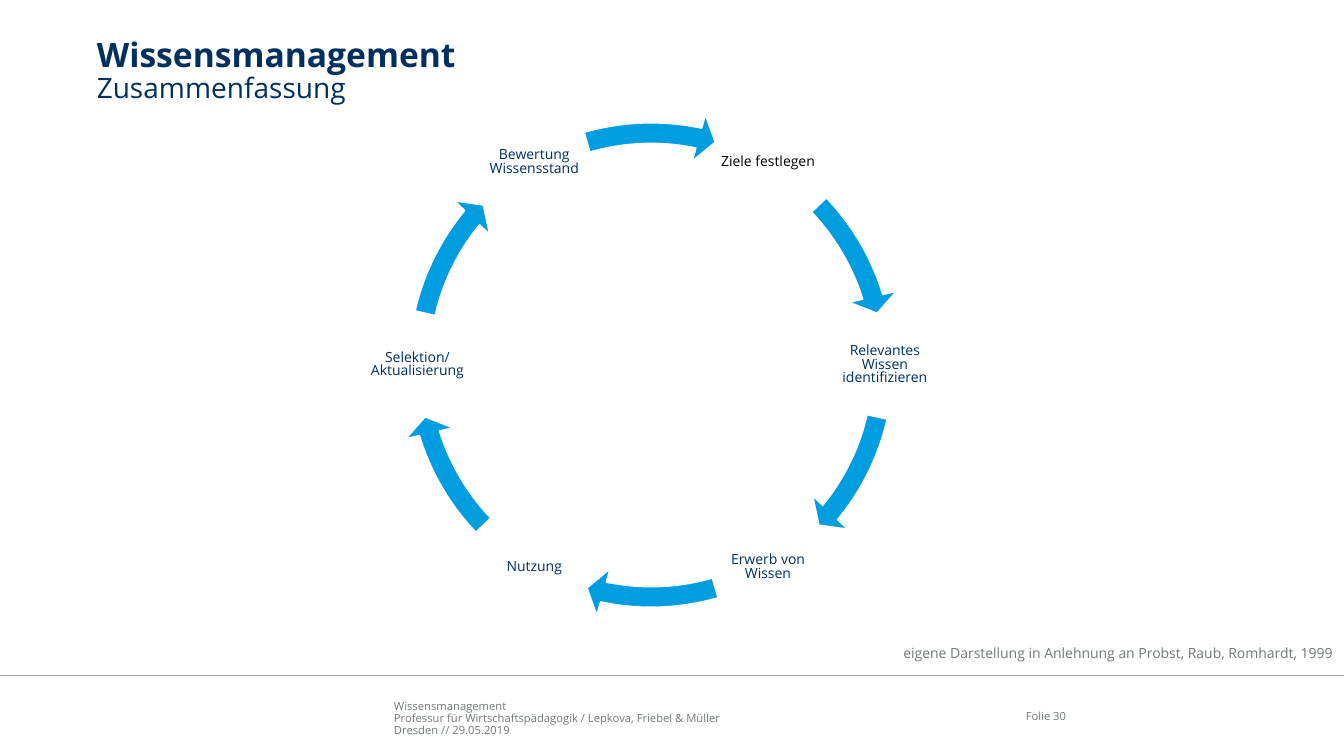
from dataclasses import dataclass
from math import cos, radians, sin

from lxml.etree import SubElement
from pptx import Presentation
from pptx.dml.color import RGBColor
from pptx.enum.shapes import MSO_CONNECTOR, MSO_SHAPE
from pptx.enum.text import MSO_ANCHOR as Anchor, MSO_AUTO_SIZE, PP_ALIGN as Align
from pptx.oxml.ns import qn
from pptx.slide import Slide
from pptx.text.text import TextFrame, _Paragraph as Paragraph
from pptx.util import Cm, Pt

NAVY = RGBColor(0x00, 0x30, 0x5E)
BLUE = RGBColor(0x00, 0x9E, 0xE0)
GREY = RGBColor(0x72, 0x78, 0x79)
RULE_GREY = RGBColor(0xA6, 0xA6, 0xA6)
BLACK = RGBColor(0x01, 0x00, 0x00)
WHITE = RGBColor(0xFF, 0xFF, 0xFF)
FONT = "Open Sans"

# Cycle geometry in centimetres
CENTER_X, CENTER_Y = 16.41, 9.2
RADIUS = 5.89
LABEL_SIZE = 2.64
ARROW_SIZE = 12.9


@dataclass(frozen=True)
class Stage:
    """A step of the cycle and the arc, in degrees, of the arrow leaving it."""
    label: str
    arrow_start: float
    arrow_end: float
    color: RGBColor = NAVY


@dataclass(frozen=True)
class TextBlock:
    """A text box measured in centimetres, one paragraph per line."""
    left: float
    top: float
    width: float
    height: float
    lines: tuple[str, ...]
    size: float
    color: RGBColor = GREY
    align: Align = Align.LEFT
    anchor: Anchor = Anchor.BOTTOM
    spacing: float = 0.9


STAGES = (
    Stage("Ziele festlegen", 316.37, 342.9, BLACK),
    Stage("Relevantes Wissen identifizieren", 12.93, 39.47),
    Stage("Erwerb von Wissen", 73.97, 101.87),
    Stage("Nutzung", 136.37, 162.9),
    Stage("Selektion/ Aktualisierung", 192.93, 219.47),
    Stage("Bewertung Wissensstand", 253.97, 281.87),
)

TEXT_BLOCKS = (
    TextBlock(9.93, 17.55, 14.4, 1.02, (
        "Wissensmanagement",
        "Professur für Wirtschaftspädagogik / Lepkova, Friebel & Müller",
        "Dresden // 29.05.2019"), 8),
    TextBlock(24.92, 17.53, 1.95, 0.69, ("Folie 30",), 8, align=Align.RIGHT),
    TextBlock(22.07, 15.65, 11.51, 1.65,
              ("eigene Darstellung in Anlehnung an Probst, Raub, Romhardt, 1999",),
              10, align=Align.RIGHT, anchor=Anchor.MIDDLE),
)


def format_frame(frame: TextFrame, anchor: Anchor) -> None:
    frame.word_wrap = True
    frame.auto_size = MSO_AUTO_SIZE.NONE
    frame.vertical_anchor = anchor
    frame.margin_left = frame.margin_right = 0
    frame.margin_top = frame.margin_bottom = 0


def add_run(paragraph: Paragraph, text: str, size: float, color: RGBColor,
            bold: bool = False) -> None:
    run = paragraph.add_run()
    run.text = text
    run.font.name = FONT
    run.font.size = Pt(size)
    run.font.bold = bold
    run.font.color.rgb = color


def add_text_block(slide: Slide, block: TextBlock) -> None:
    shape = slide.shapes.add_textbox(
        Cm(block.left), Cm(block.top), Cm(block.width), Cm(block.height))
    frame = shape.text_frame
    format_frame(frame, block.anchor)
    for index, line in enumerate(block.lines):
        paragraph = frame.add_paragraph() if index else frame.paragraphs[0]
        paragraph.alignment = block.align
        paragraph.line_spacing = block.spacing
        add_run(paragraph, line, block.size, block.color)


def add_title(slide: Slide) -> None:
    title = slide.shapes.title
    title.left, title.top = Cm(2.44), Cm(0.97)
    title.width, title.height = Cm(29.39), Cm(1.9)
    format_frame(title.text_frame, Anchor.TOP)
    paragraph = title.text_frame.paragraphs[0]
    paragraph.alignment = Align.LEFT
    paragraph.line_spacing = 0.9
    add_run(paragraph, "Wissensmanagement", 24, NAVY, bold=True)
    paragraph.add_line_break()
    add_run(paragraph, "Zusammenfassung", 20, NAVY)


def add_footer_rule(slide: Slide) -> None:
    rule = slide.shapes.add_connector(
        MSO_CONNECTOR.STRAIGHT, 0, Cm(17.02), Cm(33.87), Cm(17.02))
    rule.line.color.rgb = RULE_GREY
    rule.line.width = Pt(1)
    SubElement(rule._element.spPr, qn("a:effectLst"))


def add_stage_label(slide: Slide, stage: Stage, angle: float) -> None:
    left = CENTER_X + RADIUS * cos(radians(angle)) - LABEL_SIZE / 2
    top = CENTER_Y + RADIUS * sin(radians(angle)) - LABEL_SIZE / 2
    add_text_block(slide, TextBlock(
        left, top, LABEL_SIZE, LABEL_SIZE, (stage.label,), 10, stage.color,
        Align.CENTER, Anchor.MIDDLE, spacing=0.8))


def add_stage_arrow(slide: Slide, stage: Stage) -> None:
    arrow = slide.shapes.add_shape(
        MSO_SHAPE.CIRCULAR_ARROW,
        Cm(CENTER_X - ARROW_SIZE / 2), Cm(CENTER_Y - ARROW_SIZE / 2),
        Cm(ARROW_SIZE), Cm(ARROW_SIZE))
    # One degree equals 0.6 adjustment units
    adjustments = (0.04, 2.5, stage.arrow_end * 0.6, stage.arrow_start * 0.6, 0.047)
    for index, value in enumerate(adjustments):
        arrow.adjustments[index] = value
    arrow.shadow.inherit = False
    arrow.fill.solid()
    arrow.fill.fore_color.rgb = BLUE
    arrow.line.color.rgb = WHITE
    arrow.line.width = Pt(1)


def main() -> None:
    presentation = Presentation()
    presentation.slide_width, presentation.slide_height = Cm(33.87), Cm(19.05)
    slide = presentation.slides.add_slide(
        presentation.slide_layouts.get_by_name("Title Only"))
    add_title(slide)
    add_footer_rule(slide)
    for block in TEXT_BLOCKS:
        add_text_block(slide, block)
    for index, stage in enumerate(STAGES):
        add_stage_label(slide, stage, angle=index * 360 / len(STAGES) - 60)
        add_stage_arrow(slide, stage)
    presentation.save("out.pptx")


if __name__ == "__main__":
    main()
